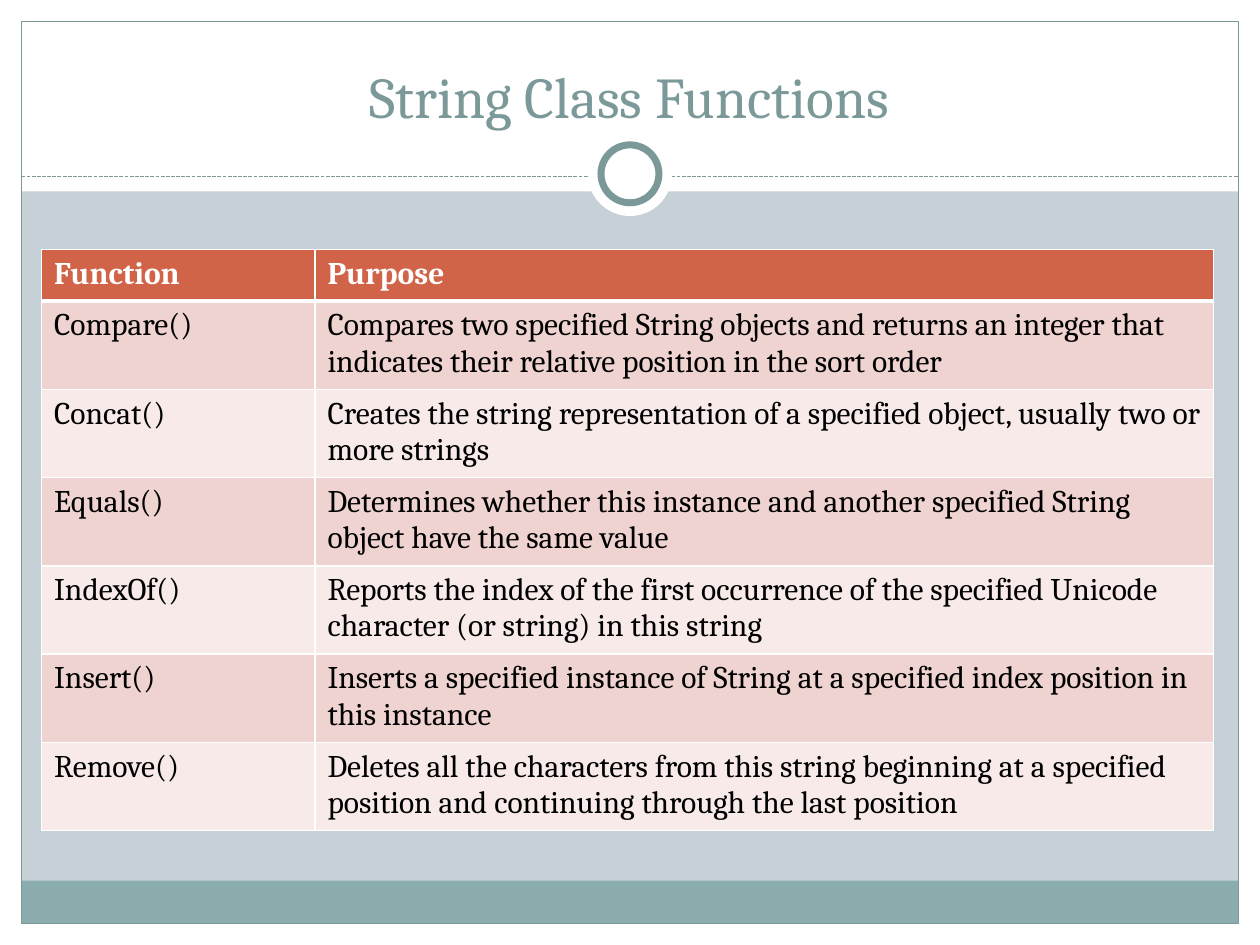
from lxml import etree
from pptx import Presentation
from pptx import util as u
from pptx.dml.color import RGBColor
from pptx.enum import dml, shapes, text
from pptx.oxml import ns

WHITE = RGBColor(0xFF, 0xFF, 0xFF)
BLACK = RGBColor(0x00, 0x00, 0x00)
BACKGROUND = RGBColor(0xC5, 0xD1, 0xD7)
TEAL = RGBColor(0x7C, 0x99, 0x9A)
FOOTER = RGBColor(0x8C, 0xAD, 0xAE)
HEADER = RGBColor(0xD1, 0x63, 0x49)
BANDS = (RGBColor(0xEE, 0xD3, 0xD0), RGBColor(0xF7, 0xEA, 0xE9))

WIDTH, HEIGHT, MARGIN = 10, 7.5, 0.17
INNER_WIDTH = WIDTH - 2 * MARGIN
HEADER_HEIGHT, ROW_HEIGHT = 0.41, 0.68

FUNCTIONS = [
    ("Function", "Purpose"),
    ("Compare()", "Compares two specified String objects and returns an integer that "
                  "indicates their relative position in the sort order"),
    ("Concat()", "Creates the string representation of a specified object, usually two "
                 "or more strings"),
    ("Equals()", "Determines whether this instance and another specified "
                 "String  object have the same value"),
    ("IndexOf()", "Reports the index of the first occurrence of the specified Unicode "
                  "character (or string) in this string"),
    ("Insert()", "Inserts a specified instance of String at a specified index position "
                 "in this instance"),
    ("Remove()", "Deletes all the characters from this string beginning at a specified "
                 "position and continuing through the last position"),
]


class SlideBuilder:
    font = "Cambria"

    def __init__(self, slide):
        self.slide = slide
        slide.background.fill.solid()
        slide.background.fill.fore_color.rgb = BACKGROUND

    def shape(self, kind, box, fill=None, line=None, line_width=0.75):
        shape = self.slide.shapes.add_shape(kind, *map(u.Inches, box))
        shape.shadow.inherit = False
        if fill is None:
            shape.fill.background()
        else:
            shape.fill.solid()
            shape.fill.fore_color.rgb = fill
        if line is None:
            shape.line.fill.background()
        else:
            shape.line.color.rgb = line
            shape.line.width = u.Pt(line_width)

    def rectangle(self, *box, **style):
        self.shape(shapes.MSO_SHAPE.RECTANGLE, box, **style)

    def circle(self, center_x, center_y, diameter, **style):
        box = (center_x - diameter / 2, center_y - diameter / 2, diameter, diameter)
        self.shape(shapes.MSO_SHAPE.OVAL, box, **style)

    def dashed_line(self, left, right, y):
        line = self.slide.shapes.add_connector(
            shapes.MSO_CONNECTOR.STRAIGHT, *map(u.Inches, (left, y, right, y)))
        line.line.color.rgb = TEAL
        line.line.width = u.Pt(0.75)
        line.line.dash_style = dml.MSO_LINE.SQUARE_DOT
        etree.SubElement(line._element.spPr, ns.qn("a:effectLst"))

    def format_runs(self, text_frame, size, color, bold=False):
        for paragraph in text_frame.paragraphs:
            for run in paragraph.runs:
                run.font.name = self.font
                run.font.size = u.Pt(size)
                run.font.bold = bold
                run.font.color.rgb = color

    def title(self, words, *box):
        text_frame = self.slide.shapes.add_textbox(*map(u.Inches, box)).text_frame
        text_frame.word_wrap = True
        text_frame.vertical_anchor = text.MSO_ANCHOR.BOTTOM
        text_frame.text = words
        text_frame.paragraphs[0].alignment = text.PP_ALIGN.CENTER
        self.format_runs(text_frame, 33, TEAL)

    def border(self, cell, widths):
        properties = cell._tc.get_or_add_tcPr()
        for index, (side, width) in enumerate(widths.items()):
            line = etree.Element(ns.qn(f"a:ln{side}"), w=str(u.Pt(width)))
            fill = etree.SubElement(line, ns.qn("a:solidFill"))
            etree.SubElement(fill, ns.qn("a:srgbClr"), val=str(WHITE))
            properties.insert(index, line)

    def table(self, rows, left, top, column_widths):
        height = HEADER_HEIGHT + ROW_HEIGHT * (len(rows) - 1)
        box = map(u.Inches, (left, top, sum(column_widths), height))
        table = self.slide.shapes.add_table(len(rows), len(column_widths), *box).table
        for column, width in zip(table.columns, column_widths):
            column.width = u.Inches(width)
        for row_index, words in enumerate(rows):
            is_header = row_index == 0
            table.rows[row_index].height = u.Inches(HEADER_HEIGHT if is_header else ROW_HEIGHT)
            for column_index, value in enumerate(words):
                cell = table.cell(row_index, column_index)
                cell.text_frame.text = value
                self.format_runs(cell.text_frame, 18, WHITE if is_header else BLACK, is_header)
                cell.fill.solid()
                cell.fill.fore_color.rgb = HEADER if is_header else BANDS[(row_index - 1) % 2]
                self.border(cell, {"L": 1, "R": 1, "T": 3 if row_index == 1 else 1,
                                   "B": 3 if is_header else 1})


def main():
    presentation = Presentation()
    presentation.slide_width = u.Inches(WIDTH)
    presentation.slide_height = u.Inches(HEIGHT)
    builder = SlideBuilder(presentation.slides.add_slide(presentation.slide_layouts[6]))

    builder.rectangle(0, HEIGHT - MARGIN, WIDTH, MARGIN, fill=WHITE)
    builder.rectangle(0, 0, WIDTH, 1.52, fill=WHITE)
    for left in (0, WIDTH - MARGIN):
        builder.rectangle(left, 0, MARGIN, HEIGHT, fill=WHITE)
    builder.rectangle(MARGIN, 6.99, INNER_WIDTH, 0.34, fill=FOOTER)
    builder.rectangle(MARGIN, MARGIN, INNER_WIDTH, HEIGHT - 2 * MARGIN, line=TEAL)
    builder.dashed_line(MARGIN, WIDTH - MARGIN, 1.4)
    builder.circle(WIDTH / 2, 1.38, 0.67, fill=WHITE)
    builder.circle(WIDTH / 2, 1.38, 0.46, fill=WHITE, line=TEAL, line_width=4)
    builder.title("String Class Functions", 0.33, 0.25, 9.33, 0.83)
    builder.table(FUNCTIONS, 0.33, 1.98, (2.17, 7.13))

    presentation.save("out.pptx")


if __name__ == "__main__":
    main()
